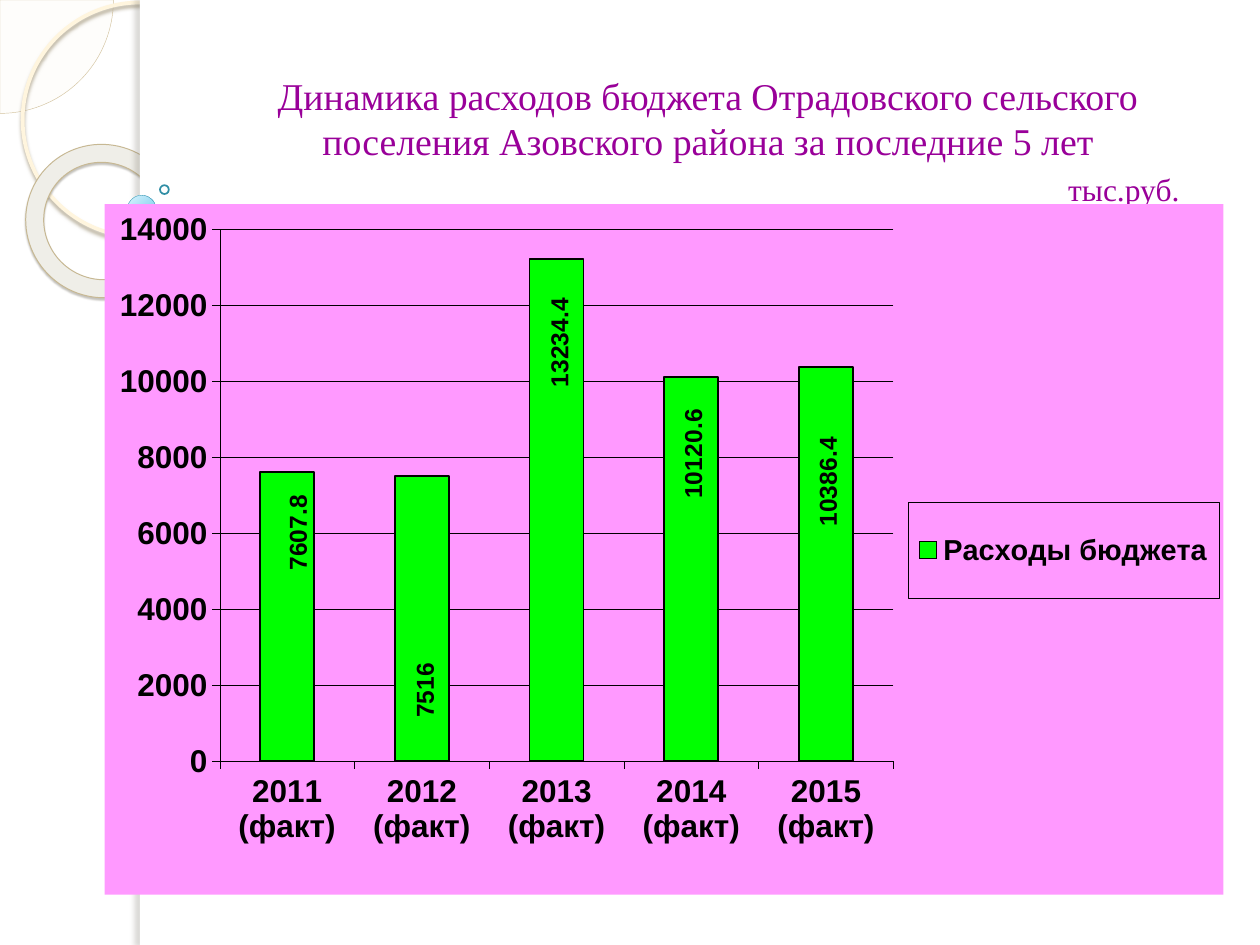
from lxml import etree
from pptx import Presentation, util as u
from pptx.chart.data import CategoryChartData
from pptx.dml.color import RGBColor
from pptx.enum import chart as ch, shapes, text
from pptx.oxml import parse_xml
from pptx.oxml.ns import nsdecls, qn

# Content
TITLE = "Динамика расходов бюджета Отрадовского сельского поселения Азовского района за последние 5 лет"
UNIT = "тыс.руб."
SERIES = "Расходы бюджета"
SPENDING = {2011: 7607.8, 2012: 7516, 2013: 13234.4, 2014: 10120.6, 2015: 10386.4}
# Label shifts from the bar tops, as shares of the chart's size
SHIFTS = [(0.01, 0.15), (0.003, 0.358), (0.003, 0.194), (0.002, 0.184), (0.002, 0.239)]
PLOT = {"x": 0.103, "y": 0.037, "w": 0.602, "h": 0.77}
LEGEND = {"x": 0.718, "y": 0.432, "w": 0.278, "h": 0.139}
C = {"white": "FFFFFF", "black": "000000", "title": "990099", "chart": "FF99FF",
     "bar": "00FF00", "cream": "FEFAF4", "sand": "D3C39F", "ring": "FFF5DE",
     "donut": "EFEEE8", "khaki": "C7B893", "ball": "DAF4FF", "ball_edge": "6BC7E8",
     "teal": "308EA5", "ring_shade": "B0A68F", "donut_shade": "5A5444",
     "panel_shade": "736F63"}
W, H, EDGE = 10, 7.5, 1.11
KIND = shapes.MSO_SHAPE

prs = Presentation()
prs.slide_width, prs.slide_height = u.Inches(W), u.Inches(H)
s = prs.slides.add_slide(prs.slide_layouts[6])


def rgb(name):
    return RGBColor.from_string(C[name])


def box(*at):
    return [u.Inches(v) for v in at]


def outline(line, name, width):
    line.color.rgb = rgb(name)
    line.width = u.Pt(width)


def add_shape(kind, at, fill=None, line=None, shadow=None, alpha=None):
    sp = s.shapes.add_shape(kind, *box(*at))
    if fill:
        sp.fill.solid()
        sp.fill.fore_color.rgb = rgb(fill)
        if alpha:
            clr = sp._element.spPr.find(".//" + qn("a:srgbClr"))
            etree.SubElement(clr, qn("a:alpha"), val=str(alpha * 1000))
    else:
        sp.fill.background()
    if line:
        outline(sp.line, *line)
    else:
        sp.line.fill.background()
    sp.shadow.inherit = False
    if shadow:
        name, opacity, blur, dist, angle = shadow
        sp._element.spPr.find(qn("a:effectLst")).append(parse_xml(
            f'<a:outerShdw {nsdecls("a")} blurRad="{u.Pt(blur)}" dist="{u.Pt(dist)}" '
            f'dir="{angle * 60000}" rotWithShape="0"><a:srgbClr val="{C[name]}">'
            f'<a:alpha val="{opacity * 1000}"/></a:srgbClr></a:outerShdw>'))
    return sp


def add_text(at, words, size, align):
    tf = s.shapes.add_textbox(*box(*at)).text_frame
    tf.word_wrap = True
    tf.margin_top = tf.margin_bottom = 0
    p = tf.paragraphs[0]
    p.text, p.alignment, p.line_spacing = words, align, u.Pt(25.7)
    p.font.size, p.font.name = u.Pt(size), "Times New Roman"
    p.font.color.rgb = rgb("title")


def style(font, size):
    font.size, font.bold, font.name = u.Pt(size), True, "Arial"
    font.color.rgb = rgb("black")


# Side decoration
pie = add_shape(KIND.PIE, (-0.9, -0.9, 1.8, 1.8), "cream", ("sand", 0.25), alpha=33)
pie.adjustments[0], pie.adjustments[1] = 0, 54
add_shape(KIND.OVAL, (0.18, 0.02, 1.86, 1.86), line=("ring", 2.15),
          shadow=("ring_shade", 85, 2, 2, 90))
donut = add_shape(KIND.DONUT, (0.2, 1.15, 1.23, 1.21), "donut", ("khaki", 0.58),
                  ("donut_shade", 35, 1, 1.2, 75))
donut.adjustments[0], donut.rotation = 0.118, 38.6

# White panel with a shaded left edge
add_shape(KIND.RECTANGLE, (EDGE, 0, W - EDGE, H), "white")
add_shape(KIND.RECTANGLE, (EDGE, 0, 0.08, H), "white",
          shadow=("panel_shade", 25, 3, 3, 180))

# Bubbles
ball = add_shape(KIND.OVAL, (1.01, 1.55, 0.23, 0.23), "ball", ("teal", 0.16))
ball.fill.gradient()
ball.fill.gradient_angle = 315
for stop, name in zip(ball.fill.gradient_stops, ("ball", "ball_edge")):
    stop.color.rgb = rgb(name)
add_shape(KIND.OVAL, (1.27, 1.47, 0.07, 0.07), line=("teal", 1))

# Title and unit
add_text((1.57, 0.58, 8.1, 0.72), TITLE, 21.6, text.PP_ALIGN.CENTER)
add_text((7.46, 1.29, 2, 0.36), UNIT, 18, text.PP_ALIGN.RIGHT)

# Chart
data = CategoryChartData()
data.categories = [f"{year} (факт)" for year in SPENDING]
data.add_series(SERIES, SPENDING.values())
chart = s.shapes.add_chart(ch.XL_CHART_TYPE.COLUMN_CLUSTERED,
                           *box(0.83, 1.62, 8.88, 5.48), data).chart
style(chart.font, 18)
chart.has_title = False
chart.has_legend = True
chart.legend.position = ch.XL_LEGEND_POSITION.RIGHT
chart.legend.include_in_layout = False
style(chart.legend.font, 16.5)


def area_format(fill, line=None):
    edge = (f'<a:ln w="3175"><a:solidFill><a:srgbClr val="{C[line]}"/></a:solidFill></a:ln>'
            if line else "<a:ln><a:noFill/></a:ln>")
    paint = f'<a:solidFill><a:srgbClr val="{C[fill]}"/></a:solidFill>'
    return parse_xml(f'<c:spPr {nsdecls("c", "a")}>{paint}{edge}</c:spPr>')


def manual_layout(values, head=""):
    parts = "".join(f'<c:{k} val="{v}"/>' for k, v in values.items())
    return parse_xml(f'<c:layout {nsdecls("c")}><c:manualLayout>'
                     f'{head}{parts}</c:manualLayout></c:layout>')


space = chart._chartSpace
space.find(qn("c:chart")).addnext(area_format("chart"))
legend = space.find(".//" + qn("c:legend"))
area = space.find(".//" + qn("c:plotArea"))
for part in (legend, area):
    for old in part.findall(qn("c:layout")):
        part.remove(old)
modes = '<c:xMode val="edge"/><c:yMode val="edge"/>'
area.insert(0, manual_layout(PLOT, '<c:layoutTarget val="inner"/>' + modes))
legend.find(qn("c:legendPos")).addnext(manual_layout(LEGEND, modes))
legend.find(qn("c:txPr")).addprevious(area_format("chart", "black"))

# Axes
for axis in (chart.category_axis, chart.value_axis):
    style(axis.tick_labels.font, 18)
    outline(axis.format.line, "black", 0.25)
    axis.major_tick_mark = ch.XL_TICK_MARK.OUTSIDE
chart.category_axis.tick_label_position = ch.XL_TICK_LABEL_POSITION.LOW
axis = chart.value_axis
axis.minimum_scale, axis.maximum_scale, axis.major_unit = 0, 14000, 2000
outline(axis.major_gridlines.format.line, "black", 0.25)

# Bars and upright labels
plot = chart.plots[0]
plot.gap_width, plot.vary_by_categories = 150, False
bars = plot.series[0]
bars.format.fill.solid()
bars.format.fill.fore_color.rgb = rgb("bar")
outline(bars.format.line, "black", 1)
bars.data_labels.show_value = True
style(bars.data_labels.font, 14)
for i in range(len(SHIFTS)):
    label = bars.points[i].data_label
    style(label.font, 14)
    label.position = ch.XL_LABEL_POSITION.OUTSIDE_END
for dlbl, (x, y) in zip(bars._element.iter(qn("c:dLbl")), SHIFTS):
    dlbl.find(qn("c:idx")).addnext(manual_layout({"x": x, "y": y}))
    body = dlbl.find(".//" + qn("a:bodyPr"))
    body.set("rot", "-5400000")
    body.set("vert", "horz")

# No leader lines between bars and labels
labels = bars._element.find(qn("c:dLbls"))
for flag in labels.findall(qn("c:showLeaderLines")):
    flag.set("val", "0")
labels.append(parse_xml(
    f'<c:extLst {nsdecls("c")}><c:ext uri="{{CE6537A1-D6FC-4f65-9D91-7224C49458BB}}" '
    'xmlns:c15="http://schemas.microsoft.com/office/drawing/2012/chart">'
    '<c15:showLeaderLines val="0"/></c:ext></c:extLst>'))

prs.save("out.pptx")
